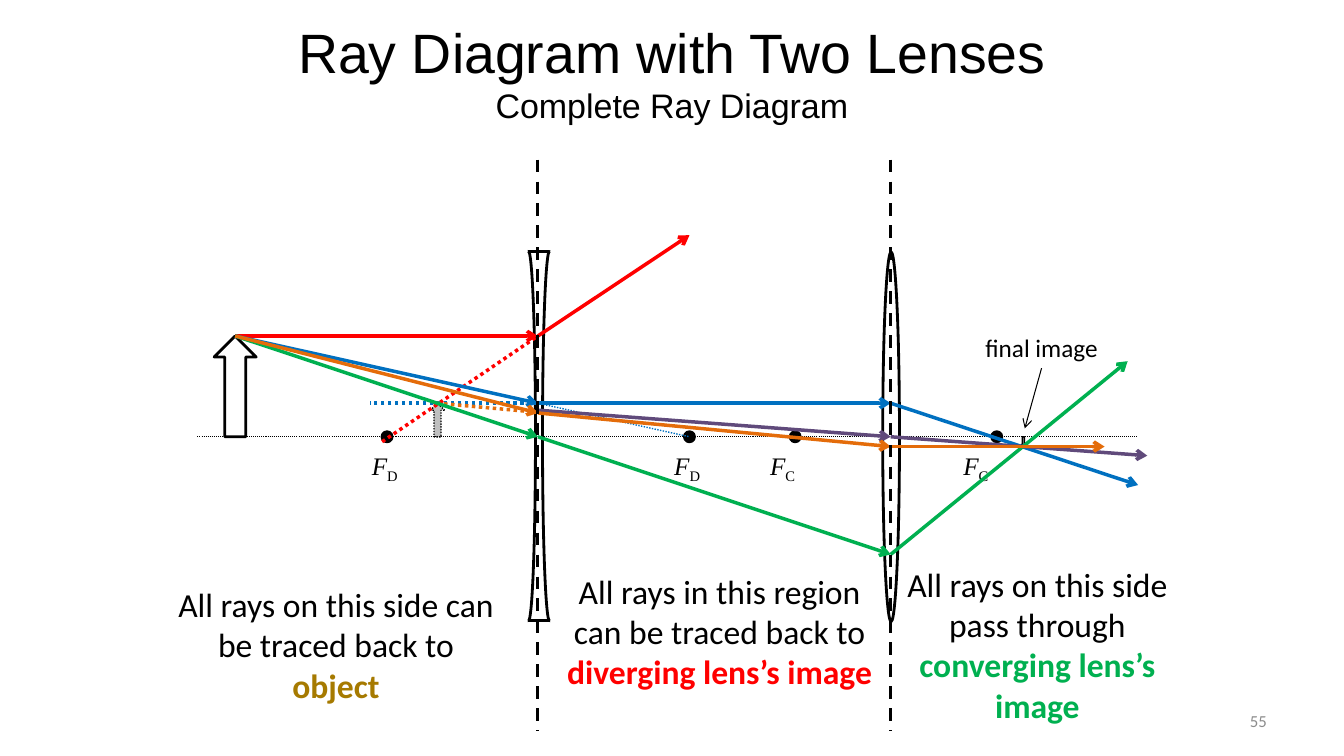
from pptx import Presentation
from pptx.dml.color import RGBColor
from pptx.enum.dml import MSO_LINE as DASH
from pptx.enum.shapes import MSO_CONNECTOR, MSO_SHAPE as SHAPE
from pptx.enum.text import MSO_ANCHOR as ANCHOR, MSO_AUTO_SIZE as FIT, PP_ALIGN as ALIGN
from pptx.oxml.ns import qn
from pptx.util import Pt
from lxml.etree import SubElement

COLORS = {
    "black": "000000", "red": "FF0000", "blue": "0070C0", "green": "00B050",
    "purple": "604A7B", "orange": "E46C0A", "gold": "A67A00",
    "number": "8C8C8C", "virtual": "BFBFBF", "final": "A6A6A6",
}

# Optical layout
AXIS = 312
DIVERGING, CONVERGING = 384.25, 636.25
LENS_TOP, LENS_HEIGHT = 179.5, 264
TIP = (168, 240)
PARALLEL = 288  # height of the blue ray between the lenses
FINAL_Y = 319


def color(name):
    return RGBColor.from_string(COLORS[name])


def add_line(slide, start, end, name="black", width=2.5, dash=None, arrow=False):
    line = slide.shapes.add_connector(
        MSO_CONNECTOR.STRAIGHT, *(Pt(v) for v in (*start, *end)))
    line.line.color.rgb = color(name)
    line.line.width = Pt(width)
    if dash:
        line.line.dash_style = dash
    if arrow:
        SubElement(line.line._get_or_add_ln(), qn("a:tailEnd"), type="arrow")
    SubElement(line._element.spPr, qn("a:effectLst"))


def add_ray(slide, name, *points):
    for start, end in zip(points, points[1:]):
        add_line(slide, start, end, name, arrow=True)


def add_outline(slide, kind, box, fill=None, width=2):
    shape = slide.shapes.add_shape(kind, *(Pt(v) for v in box))
    shape.shadow.inherit = False
    if fill:
        shape.fill.solid()
        shape.fill.fore_color.rgb = color(fill)
    else:
        shape.fill.background()
    shape.line.color.rgb = color("black")
    shape.line.width = Pt(width)
    return shape


def add_text(slide, box, align=ALIGN.CENTER, anchor=ANCHOR.TOP, fit=FIT.NONE):
    frame = slide.shapes.add_textbox(*(Pt(v) for v in box)).text_frame
    frame.word_wrap = True
    frame.auto_size = fit
    frame.vertical_anchor = anchor
    paragraph = frame.paragraphs[0]
    paragraph.alignment = align
    return paragraph


def add_run(paragraph, text, size, font="Calibri", name="black", bold=False, italic=False):
    run = paragraph.add_run()
    run.text = text
    run.font.size = Pt(size)
    run.font.name = font
    run.font.color.rgb = color(name)
    run.font.bold = bold
    run.font.italic = italic
    return run


def add_focus(slide, x, letter, label_left, label_width):
    add_outline(slide, SHAPE.OVAL, (x - 3.6, AXIS - 3.6, 7.2, 7.2), "black")
    label = add_text(slide, (label_left, 318, label_width, 29), ALIGN.LEFT,
                     fit=FIT.SHAPE_TO_FIT_TEXT)
    add_run(label, "F", 18, "Times New Roman", italic=True)
    subscript = add_run(label, letter, 18, "Times New Roman")
    subscript.font._element.set("baseline", "-25000")


def add_diverging_lens(slide):
    for left, angles in ((372.5, (161.95, 54.05)), (387.5, (53.95, 162.05))):
        side = add_outline(slide, SHAPE.ARC, (left, LENS_TOP, 10, LENS_HEIGHT))
        side.adjustments[0], side.adjustments[1] = angles
    for y in (LENS_TOP, LENS_TOP + LENS_HEIGHT):
        add_line(slide, (377, y), (392.5, y), width=2)


def add_caption(slide, box, text, emphasis, name):
    caption = add_text(slide, box, fit=FIT.SHAPE_TO_FIT_TEXT)
    add_run(caption, text, 24)
    add_run(caption, emphasis, 24, name=name, bold=True)


def main():
    prs = Presentation()
    prs.slide_width, prs.slide_height = Pt(960), Pt(540)
    slide = prs.slides.add_slide(prs.slide_layouts[6])

    # Title
    title = add_text(slide, (156, 6, 648, 90), anchor=ANCHOR.MIDDLE)
    add_run(title, "Ray Diagram with Two Lenses", 39.6, "Arial")
    title.add_line_break()
    add_run(title, "Complete Ray Diagram", 24.3, "Arial")

    # Object and the diverging lens's virtual image
    virtual = add_outline(slide, SHAPE.DOWN_ARROW, (307.5, PARALLEL, 10, 24), "virtual", 1)
    virtual.line.dash_style = DASH.ROUND_DOT
    virtual.rotation = 180
    add_outline(slide, SHAPE.DOWN_ARROW, (153, 240, 30, 72)).rotation = 180

    # Axis, lenses and focal points
    add_line(slide, (141, AXIS), (813, AXIS), width=0.75, dash=DASH.ROUND_DOT)
    add_diverging_lens(slide)
    add_outline(slide, SHAPE.OVAL, (630.5, 180, 12, LENS_HEIGHT))
    for focus in ((276.5, "D", 258.5, 41), (492.5, "D", 474.5, 38),
                  (568, "C", 543, 36), (712, "C", 681, 42)):
        add_focus(slide, *focus)

    # Final image
    add_outline(slide, SHAPE.DOWN_ARROW, (729.5, AXIS, 3, 7), "final", 1)

    # Traced-back rays
    for name, width, start, end in (
            ("red", 2.5, (273, 315.5), (DIVERGING, 240)),
            ("blue", 1, (DIVERGING, PARALLEL), (492.5, AXIS)),
            ("blue", 2.5, (DIVERGING, PARALLEL), (264, PARALLEL)),
            ("orange", 2.5, (DIVERGING, 294.5), (312.5, PARALLEL))):
        add_line(slide, start, end, name, width, DASH.ROUND_DOT)

    # Rays
    add_ray(slide, "red", TIP, (DIVERGING, 240), (492.5, 168))
    add_ray(slide, "blue", TIP, (DIVERGING, PARALLEL), (CONVERGING, PARALLEL), (813, 346.5))
    add_ray(slide, "green", TIP, (DIVERGING, AXIS), (CONVERGING, 396), (805.5, 258))
    add_ray(slide, "purple", (DIVERGING, 293), (CONVERGING, AXIS), (819.5, 325.5))
    add_ray(slide, "orange", TIP, (DIVERGING, 295), (CONVERGING, FINAL_Y), (789, FINAL_Y))

    # Region captions
    add_caption(slide, (120, 413.5, 240, 94),
                "All rays on this side can be traced back to ", "object", "gold")
    add_caption(slide, (394, 404, 240, 94),
                "All rays in this region can be traced back to ",
                "diverging lens’s image", "red")
    add_caption(slide, (636, 399, 210, 124),
                "All rays on this side pass through ", "converging lens’s image", "green")

    # Region borders
    for x in (DIVERGING, CONVERGING):
        add_line(slide, (x, 114), (x, 522), width=2.25, dash=DASH.DASH)

    # Final image label and slide number
    final_label = add_text(slide, (690, 234, 108, 29), fit=FIT.SHAPE_TO_FIT_TEXT)
    add_run(final_label, "final image", 18)
    add_line(slide, (744, 263), (732, 306), width=0.75, arrow=True)
    number = add_text(slide, (688, 500.5, 224, 29), ALIGN.RIGHT, ANCHOR.MIDDLE)
    add_run(number, "55", 12, name="number")

    prs.save("out.pptx")


if __name__ == "__main__":
    main()
